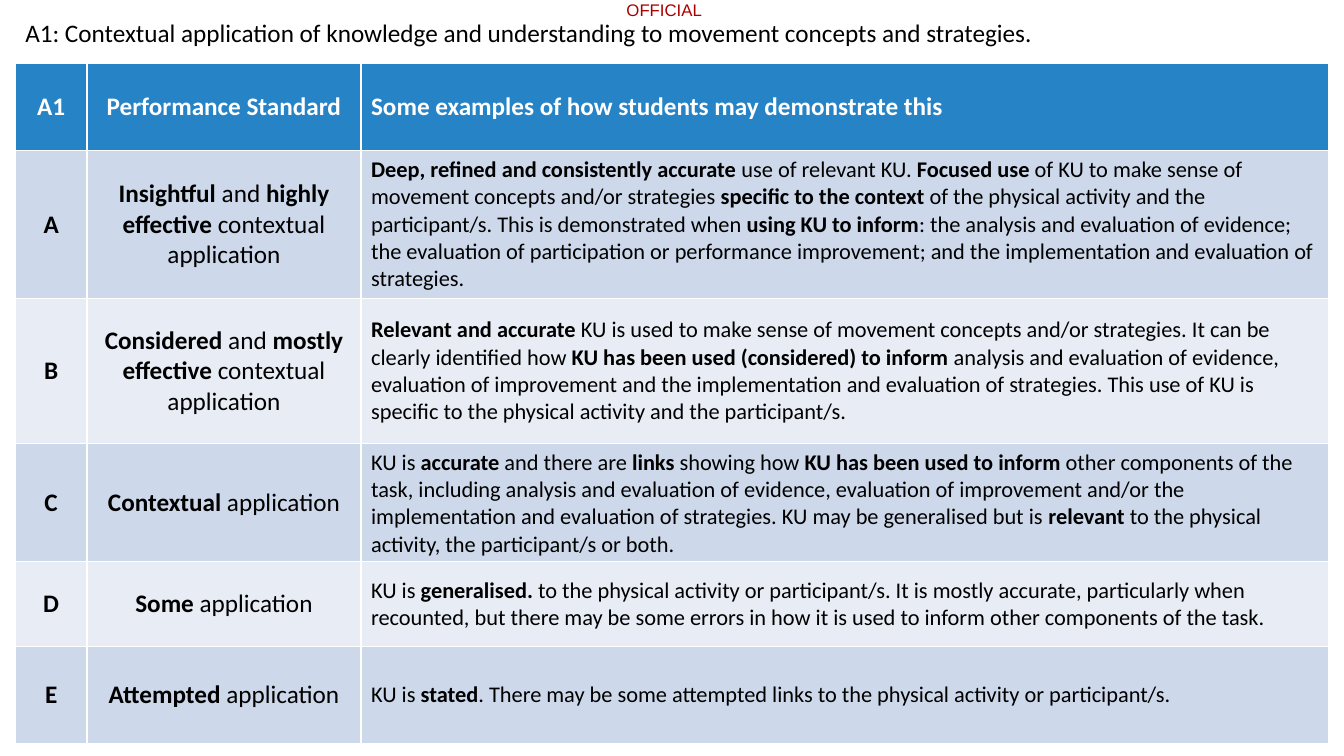
from pptx import Presentation
from pptx.dml.color import RGBColor
from pptx.enum import text as t
from pptx.util import Pt

BLACK = RGBColor(0, 0, 0)
WHITE = RGBColor(255, 255, 255)
RED = RGBColor(0xA8, 0, 0)
BLUE = RGBColor(0x26, 0x83, 0xC6)
BANDS = [RGBColor(0xE8, 0xED, 0xF5), RGBColor(0xCD, 0xD9, 0xEA)]

COLS = [51.1, 195.8, 691.2]
ROWS = [61.9, 105.8, 103.7, 84.3, 60.5, 69.1]
GRADES = [
    ("**A1**", "**Performance Standard**",
     "**Some examples of how students may demonstrate this**"),
    ("**A**", "**Insightful** and **highly effective **contextual application",
     "**Deep, refined and consistently accurate **use of relevant KU. "
     "**Focused use **of KU to make sense of movement concepts and/or strategies "
     "**specific to the context **of the physical activity and the participant/s. "
     "This is demonstrated when **using KU to inform**: the analysis and evaluation "
     "of evidence; the evaluation of participation or performance improvement; and "
     "the implementation and evaluation of strategies."),
    ("**B**", "**Considered** and **mostly effective** contextual application",
     "**Relevant and accurate **KU is used to make sense of movement concepts and/or "
     "strategies. It can be clearly identified how **KU has been used (considered) "
     "to inform **analysis and evaluation of evidence, evaluation of improvement and "
     "the implementation and evaluation of strategies. This use of KU is specific to "
     "the physical activity and the participant/s."),
    ("**C**", "**Contextual** application",
     "KU is **accurate** and there are **links** showing how **KU has been used to "
     "inform **other components of the task, including analysis and evaluation of "
     "evidence, evaluation of improvement and/or the implementation and evaluation "
     "of strategies. KU may be generalised but is **relevant** to the physical "
     "activity, the participant/s or both."),
    ("**D**", "**Some** application",
     "KU is **generalised. **to the physical activity or participant/s. It is mostly "
     "accurate, particularly when recounted, but there may be some errors in how it "
     "is used to inform other components of the task."),
    ("**E**", "**Attempted** application",
     "KU is **stated**. There may be some attempted links to the physical activity "
     "or participant/s."),
]


def write(para, words, size, color, face="Calibri"):
    """Fill a paragraph; words between double asterisks are bold."""
    for i, part in enumerate(words.split("**")):
        if part:
            run = para.add_run()
            run.text = part
            font = run.font
            font.name, font.size, font.bold = face, Pt(size), i % 2 == 1
            font.color.rgb = color


deck = Presentation()
deck.slide_width, deck.slide_height = Pt(960), Pt(540)
slide = deck.slides.add_slide(deck.slide_layouts[6])

# Marking at the top edge
mark = slide.shapes.add_textbox(Pt(445.7), Pt(0), Pt(57.6), Pt(14.4)).text_frame
mark.margin_left = mark.margin_right = mark.margin_top = mark.margin_bottom = 0
mark.paragraphs[0].alignment = t.PP_ALIGN.CENTER
mark.word_wrap = False
write(mark.paragraphs[0], "OFFICIAL", 12, RED, "Arial")

# Table of standards
table = slide.shapes.add_table(
    len(ROWS), len(COLS), Pt(11), Pt(45.6), Pt(sum(COLS)), Pt(sum(ROWS))).table
for col, width in zip(table.columns, COLS):
    col.width = Pt(width)
for r, (height, grade) in enumerate(zip(ROWS, GRADES)):
    table.rows[r].height = Pt(height)
    for c, words in enumerate(grade):
        cell = table.cell(r, c)
        cell.vertical_anchor = t.MSO_ANCHOR.MIDDLE
        cell.fill.solid()
        cell.fill.fore_color.rgb = BANDS[r % 2] if r else BLUE
        para = cell.text_frame.paragraphs[0]
        para.alignment = t.PP_ALIGN.LEFT if c == 2 else t.PP_ALIGN.CENTER
        write(para, words, 16 if r and c == 2 else 18, BLACK if r else WHITE)

# Heading
head = slide.shapes.add_textbox(Pt(11), Pt(8.9), Pt(938.9), Pt(29)).text_frame
head.word_wrap = True
head.paragraphs[0].space_after = Pt(6)
write(head.paragraphs[0], "A1: Contextual application of knowledge and understanding "
      "to movement concepts and strategies.", 18, BLACK)

deck.save("out.pptx")
